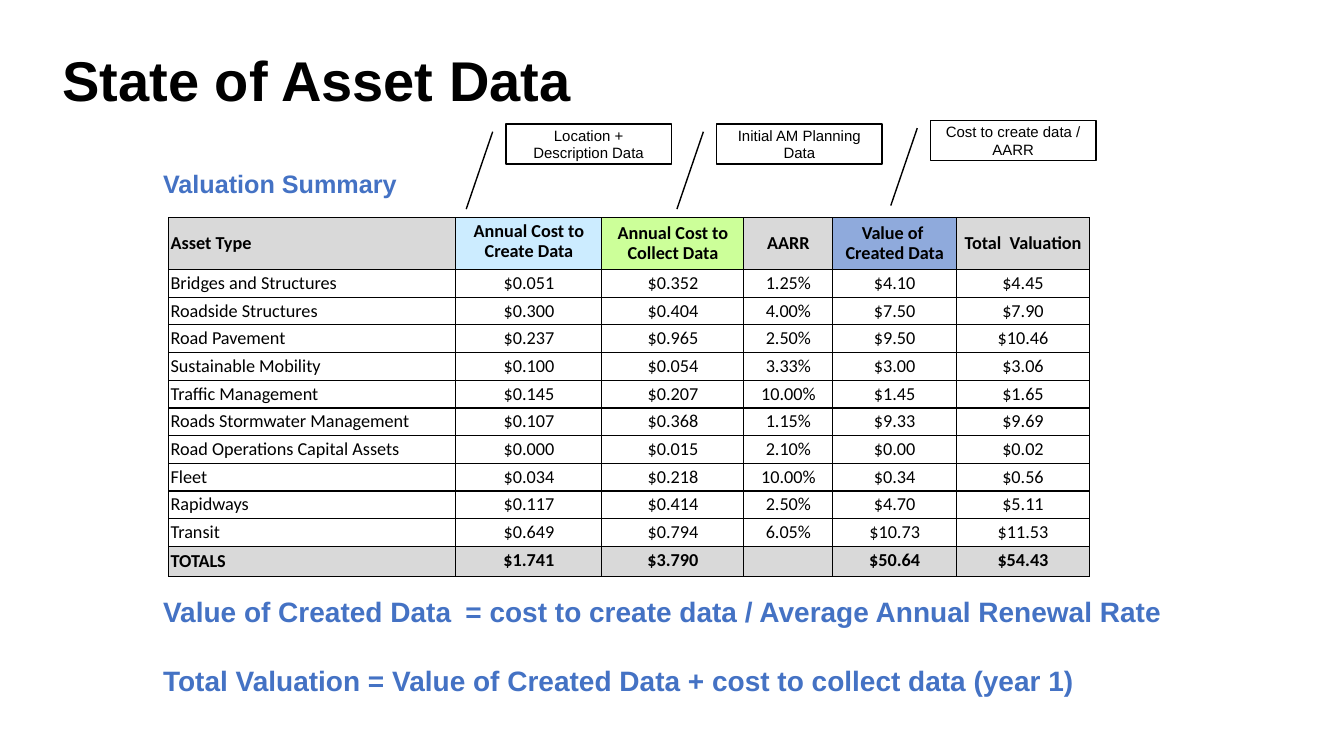
from lxml.etree import SubElement
from pptx import Presentation
from pptx.dml.color import RGBColor
from pptx.enum.shapes import MSO_SHAPE as Shape
from pptx.enum.text import MSO_ANCHOR as Anchor, MSO_AUTO_SIZE as AutoSize, PP_ALIGN as Align
from pptx.oxml.ns import qn
from pptx.util import Cm, Pt

BLACK, BLUE, GREY = "000000", "4472C4", "D9D9D9"

HEADERS = ["Asset Type", "Annual Cost to Create Data", "Annual Cost to Collect Data",
           "AARR", "Value of  Created Data", "Total  Valuation"]
HEADER_FILLS = [GREY, "CCECFF", "CCFF99", GREY, "8FAADC", GREY]
ASSETS = [
    ["Bridges and Structures", "$0.051", "$0.352", "1.25%", "$4.10", "$4.45"],
    ["Roadside Structures", "$0.300", "$0.404", "4.00%", "$7.50", "$7.90"],
    ["Road Pavement", "$0.237", "$0.965", "2.50%", "$9.50", "$10.46"],
    ["Sustainable Mobility", "$0.100", "$0.054", "3.33%", "$3.00", "$3.06"],
    ["Traffic Management", "$0.145", "$0.207", "10.00%", "$1.45", "$1.65"],
    ["Roads Stormwater Management", "$0.107", "$0.368", "1.15%", "$9.33", "$9.69"],
    ["Road Operations Capital Assets", "$0.000", "$0.015", "2.10%", "$0.00", "$0.02"],
    ["Fleet", "$0.034", "$0.218", "10.00%", "$0.34", "$0.56"],
    ["Rapidways", "$0.117", "$0.414", "2.50%", "$4.70", "$5.11"],
    ["Transit", "$0.649", "$0.794", "6.05%", "$10.73", "$11.53"],
]
TOTALS = ["TOTALS", "$1.741", "$3.790", "", "$50.64", "$54.43"]
COLUMN_SHARES = [7.24, 3.68, 3.58, 2.24, 3.12, 3.35]
HEADER_HEIGHT = 1.3
FORMULAS = ["Value of Created Data \t= cost to create data / Average Annual Renewal Rate",
            "Total Valuation = Value of Created Data + cost to collect data (year 1)"]


def color(hex_text):
    return RGBColor.from_string(hex_text)


def format_runs(paragraph, size, hex_text, bold=False, name="Arial"):
    for run in paragraph.runs:
        font = run.font
        font.size, font.bold, font.name = Pt(size), bold, name
        font.color.rgb = color(hex_text)


def add_title(slide, left, top, width, height):
    title = slide.shapes.title
    title.left, title.top, title.width, title.height = map(Cm, (left, top, width, height))
    frame = title.text_frame
    frame.text = "State of Asset Data"
    frame.vertical_anchor = Anchor.MIDDLE
    frame.margin_left = frame.margin_right = Cm(0.34)
    paragraph = frame.paragraphs[0]
    paragraph.alignment, paragraph.line_spacing = Align.LEFT, 0.9
    format_runs(paragraph, 40, BLACK, True)


def add_blue_text(slide, left, top, width, height, lines, size):
    frame = slide.shapes.add_textbox(*map(Cm, (left, top, width, height))).text_frame
    frame.word_wrap = True
    frame.text = "\n".join(lines)
    for index, paragraph in enumerate(frame.paragraphs):
        paragraph.space_before = Pt(25 if index else 0)
        format_runs(paragraph, size, BLUE, True)


def add_callout(slide, left, top, width, height, text):
    callout = slide.shapes.add_shape(Shape.LINE_CALLOUT_1, *map(Cm, (left, top, width, height)))
    for index, value in enumerate((0.19, -0.08, 2.14, -0.24)):
        callout.adjustments[index] = value
    callout.shadow.inherit = False
    callout.fill.background()
    callout.line.color.rgb = color(BLACK)
    callout.line.width = Pt(1)
    frame = callout.text_frame
    frame.text = text
    frame.word_wrap, frame.auto_size = True, AutoSize.NONE
    frame.vertical_anchor = Anchor.MIDDLE
    frame.paragraphs[0].alignment = Align.CENTER
    format_runs(frame.paragraphs[0], 10.7, BLACK)


def add_borders(cell):
    properties = cell._tc.get_or_add_tcPr()
    for index, side in enumerate(("a:lnL", "a:lnR", "a:lnT", "a:lnB")):
        line = SubElement(properties, qn(side), w=str(Pt(1)))
        SubElement(SubElement(line, qn("a:solidFill")), qn("a:srgbClr"), val=BLACK)
        properties.insert(index, line)


def fill_cell(cell, text, fill, bold, centred, middle):
    cell.text = text
    cell.margin_left = cell.margin_right = Cm(0.1 if centred else 0.05)
    cell.margin_top = cell.margin_bottom = Cm(0.1)
    cell.vertical_anchor = Anchor.MIDDLE if middle else Anchor.TOP
    if fill:
        cell.fill.solid()
        cell.fill.fore_color.rgb = color(fill)
    else:
        cell.fill.background()
    add_borders(cell)
    paragraph = cell.text_frame.paragraphs[0]
    paragraph.alignment = Align.CENTER if centred else Align.LEFT
    paragraph.line_spacing = 0.9
    paragraph.space_before = paragraph.space_after = Pt(2)
    format_runs(paragraph, 13, BLACK, bold, "Calibri")
    if not text:  # keeps the empty cell from stretching its row
        paragraph._p.get_or_add_endParaRPr().set("sz", "1300")


def add_valuation_table(slide, left, top, width, height):
    rows = [HEADERS, *ASSETS, TOTALS]
    last = len(rows) - 1
    table = slide.shapes.add_table(len(rows), len(HEADERS),
                                   *map(Cm, (left, top, width, height))).table
    table.first_row = table.horz_banding = False
    for column, share in zip(table.columns, COLUMN_SHARES):
        column.width = Cm(width * share / sum(COLUMN_SHARES))
    for r, values in enumerate(rows):
        table.rows[r].height = Cm((height - HEADER_HEIGHT) / last if r else HEADER_HEIGHT)
        for c, text in enumerate(values):
            fill = HEADER_FILLS[c] if r == 0 else GREY if r == last else None
            middle = c in (0, 3) or (r == 0 and c != 1)
            fill_cell(table.cell(r, c), text, fill, r in (0, last), c > 0, middle)


def build_slide(presentation):
    slide = presentation.slides.add_slide(presentation.slide_layouts[5])
    add_title(slide, 1.24, 0.25, 29.5, 3.68)
    # Section heading and formulas
    add_blue_text(slide, 3.86, 4.11, 8, 1.03, ["Valuation Summary"], 18)
    add_blue_text(slide, 3.86, 14.86, 29.13, 2.8, FORMULAS, 20)
    # Valuation table
    add_valuation_table(slide, 4.25, 5.49, 23.21, 8.98)
    # Column notes
    for left, top, text in [(12.75, 3.13, "Location + Description Data"),
                            (18.06, 3.13, "Initial AM Planning Data"),
                            (23.45, 3.04, "Cost to create data / AARR")]:
        add_callout(slide, left, top, 4.17, 1, text)


def main():
    presentation = Presentation()
    presentation.slide_width, presentation.slide_height = Cm(33.87), Cm(19.05)
    build_slide(presentation)
    presentation.save("out.pptx")


if __name__ == "__main__":
    main()
